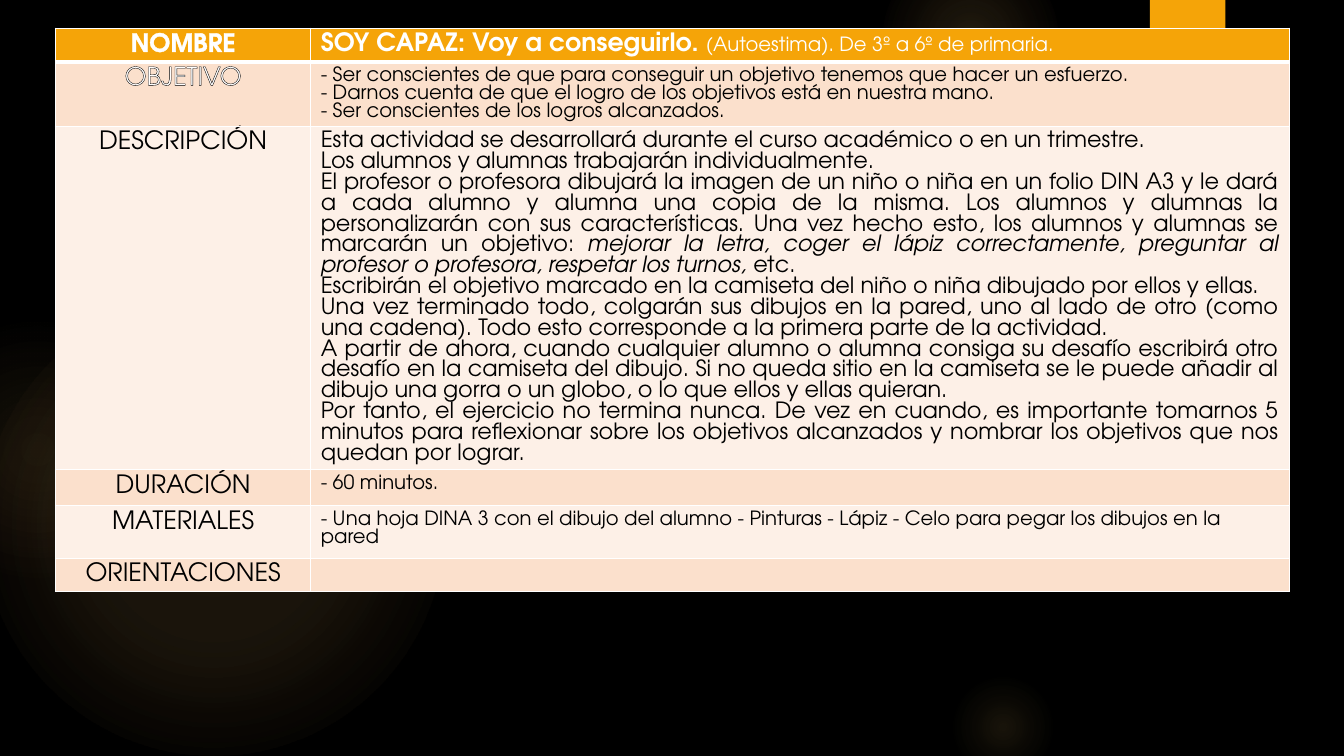
from lxml.etree import SubElement as Sub
from pptx import Presentation
from pptx.dml.color import RGBColor
from pptx.enum.shapes import MSO_SHAPE as Kind
from pptx.enum.text import PP_ALIGN as Align
from pptx.oxml.ns import qn
from pptx.util import Cm, Pt

FONT = "TeX Gyre Adventor"
WHITE, BLACK, GOLD = "FFFFFF", "000000", "F5A408"
PEACH, CREAM = "FBE0CC", "FDF0E7"
SUN, CORAL = "FAC96A", "F59B74"

GLOWS = [
    (-0.43, 7.42, 11.63, [(0, SUN, 11), (36, SUN, 10), (75, SUN, 0)]),
    (-2.34, 8.05, 6.55, [(0, SUN, 8), (36, SUN, 5), (71, CORAL, 0)]),
    (23.9, 4.65, 7.82, [(0, SUN, 7), (36, SUN, 6), (69, SUN, 0)]),
    (22.23, -1.27, 4.45, [(0, SUN, 14), (36, SUN, 7), (73, SUN, 0)]),
    (23.9, 16.94, 2.74, [(0, SUN, 10), (31, SUN, 5), (66, SUN, 0)]),
]

GOALS = [
    "- Ser conscientes de que para conseguir un objetivo tenemos que hacer un esfuerzo.",
    "- Darnos cuenta de que el logro de los objetivos está en nuestra mano.",
    "- Ser conscientes de los logros alcanzados.",
]
STEPS = [
    "Esta actividad se desarrollará durante el curso académico o en un trimestre.",
    "Los alumnos y alumnas trabajarán individualmente.",
    [
        ("El profesor o profesora dibujará la imagen de un niño o niña en un folio DIN A3 y le dará "
         "a cada alumno y alumna una copia de la misma. Los alumnos y alumnas la personalizarán con "
         "sus características. Una vez hecho esto, los alumnos y alumnas se marcarán un objetivo: ", {}),
        ("mejorar la letra, coger el lápiz correctamente, preguntar al profesor o profesora, "
         "respetar los turnos, ", {"italic": True}),
        ("etc.", {}),
    ],
    "Escribirán el objetivo marcado en la camiseta del niño o niña dibujado por ellos y ellas. ",
    "Una vez terminado todo, colgarán sus dibujos en la pared, uno al lado de otro (como una "
    "cadena). Todo esto corresponde a la primera parte de la actividad. ",
    "A partir de ahora, cuando cualquier alumno o alumna consiga su desafío escribirá otro desafío "
    "en la camiseta del dibujo. Si no queda sitio en la camiseta se le puede añadir al dibujo una "
    "gorra o un globo, o lo que ellos y ellas quieran.",
    "Por tanto, el ejercicio no termina nunca. De vez en cuando, es importante tomarnos 5 minutos "
    "para reflexionar sobre los objetivos alcanzados y nombrar los objetivos que nos quedan por "
    "lograr. ",
]
TITLE = [
    ("SOY CAPAZ: Voy a conseguirlo. ", {"size": Pt(18), "bold": True}),
    ("(Autoestima). De 3º a 6º de primaria.", {"size": Pt(14), "bold": False}),
]
TOOLS = ("- Una hoja DINA 3 con el dibujo del alumno - Pinturas - Lápiz - "
         "Celo para pegar los dibujos en la pared")

ROWS = [
    ("NOMBRE", 0.74, [TITLE], 18),
    ("OBJETIVO", 1.45, GOALS, 14),
    ("DESCRIPCIÓN", 8.48, STEPS, 16),
    ("DURACIÓN", 0.91, ["- 60 minutos."], 14),
    ("MATERIALES", 1.32, [TOOLS], 14),
    ("ORIENTACIONES", 0.64, [], 18),
]
COLS = [6.43, 24.66]


def rgb(code):
    return RGBColor.from_string(code)


def tint(node, code):
    fill = Sub(node, qn("a:solidFill"))
    Sub(fill, qn("a:srgbClr"), val=code)


class Deck:
    def __init__(self, font):
        self.font = font
        self.prs = Presentation()
        self.prs.slide_width, self.prs.slide_height = Cm(33.87), Cm(19.05)
        self.slide = self.prs.slides.add_slide(self.prs.slide_layouts[6])
        back = self.slide.background.fill
        back.solid()
        back.fore_color.rgb = rgb(BLACK)

    def shape(self, kind, left, top, width, height):
        item = self.slide.shapes.add_shape(kind, Cm(left), Cm(top), Cm(width), Cm(height))
        item.shadow.inherit = False
        item.line.fill.background()
        return item

    def glow(self, left, top, size, stops):
        item = self.shape(Kind.OVAL, left, top, size, size)
        item.fill.gradient()
        grad = item._element.spPr.find(qn("a:gradFill"))
        for node in list(grad):
            grad.remove(node)
        group = Sub(grad, qn("a:gsLst"))
        for pos, code, alpha in stops:
            stop = Sub(group, qn("a:gs"), pos=str(pos * 1000))
            color = Sub(stop, qn("a:srgbClr"), val=code)
            Sub(color, qn("a:alpha"), val=str(alpha * 1000))
        ring = Sub(grad, qn("a:path"), path="circle")
        Sub(ring, qn("a:fillToRect"), dict.fromkeys("ltrb", "50000"))

    def block(self, left, top, width, height, code):
        item = self.shape(Kind.RECTANGLE, left, top, width, height)
        item.fill.solid()
        item.fill.fore_color.rgb = rgb(code)

    def cell(self, cell, code, base):
        props = cell._tc.get_or_add_tcPr()
        for side, width in zip("LRTB", (1, 1, 1, base)):
            tint(Sub(props, qn("a:ln" + side), w=str(Pt(width))), WHITE)
        cell.fill.solid()
        cell.fill.fore_color.rgb = rgb(code)

    def text(self, cell, paras, size, code, align, bold=False):
        for num, para in enumerate(paras):
            frame = cell.text_frame
            par = frame.add_paragraph() if num else frame.paragraphs[0]
            par.alignment = align
            font = par.font
            font.name, font.size, font.bold = self.font, Pt(size), bold
            font.color.rgb = rgb(code)
            for words, style in [(para, {})] if isinstance(para, str) else para:
                run = par.add_run()
                run.text = words
                for key, value in style.items():
                    setattr(run.font, key, value)

    def label(self, cell, words, code, edge, bold):
        self.text(cell, [words], 18, code, Align.CENTER, bold)
        run = cell.text_frame.paragraphs[0].runs[0]
        run.font.color.rgb = rgb(code)
        line = run.font.line if hasattr(run.font, "line") else None
        if line is None:
            props = run._r.get_or_add_rPr()
            node = Sub(props, qn("a:ln"), w=str(Pt(0.75)))
            tint(node, edge)
            props.insert(0, node)

    def blank(self, cell, size):
        par = cell.text_frame.paragraphs[0]
        end = Sub(par._p, qn("a:endParaRPr"), sz=str(size * 100))
        Sub(end, qn("a:latin"), typeface=self.font)

    def table(self, left, top, cols, rows):
        high = sum(row[1] for row in rows)
        grid = self.slide.shapes.add_table(
            len(rows), len(cols), Cm(left), Cm(top), Cm(sum(cols)), Cm(high)).table
        for col, width in zip(grid.columns, cols):
            col.width = Cm(width)
        for num, (name, height, paras, size) in enumerate(rows):
            grid.rows[num].height = Cm(height)
            head = num == 0
            fill = GOLD if head else PEACH if num % 2 else CREAM
            left_cell, right_cell = grid.cell(num, 0), grid.cell(num, 1)
            for cell in (left_cell, right_cell):
                self.cell(cell, fill, 3 if head else 1)
            ink = WHITE if num < 2 else BLACK
            self.label(left_cell, name, ink, WHITE if head else BLACK, head)
            align = Align.JUSTIFY if paras is STEPS else Align.LEFT
            self.text(right_cell, paras, size, WHITE if head else BLACK, align)
            if not paras:
                self.blank(right_cell, size)


def main():
    deck = Deck(FONT)
    for glow in GLOWS:
        deck.glow(*glow)
    deck.block(28.98, 0, 1.9, 3.18, GOLD)
    deck.table(1.4, 0.71, COLS, ROWS)
    deck.prs.save("out.pptx")


if __name__ == "__main__":
    main()
